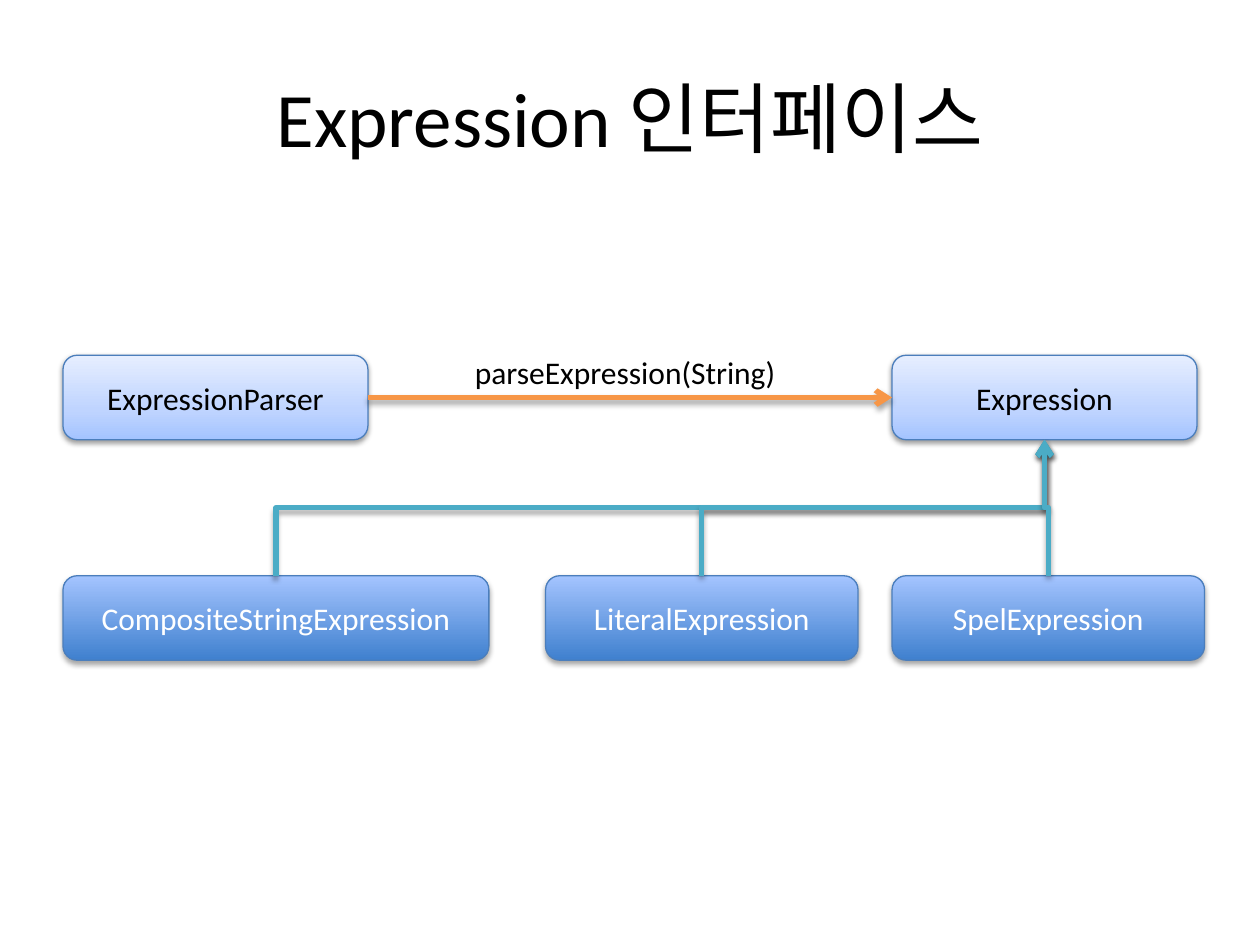
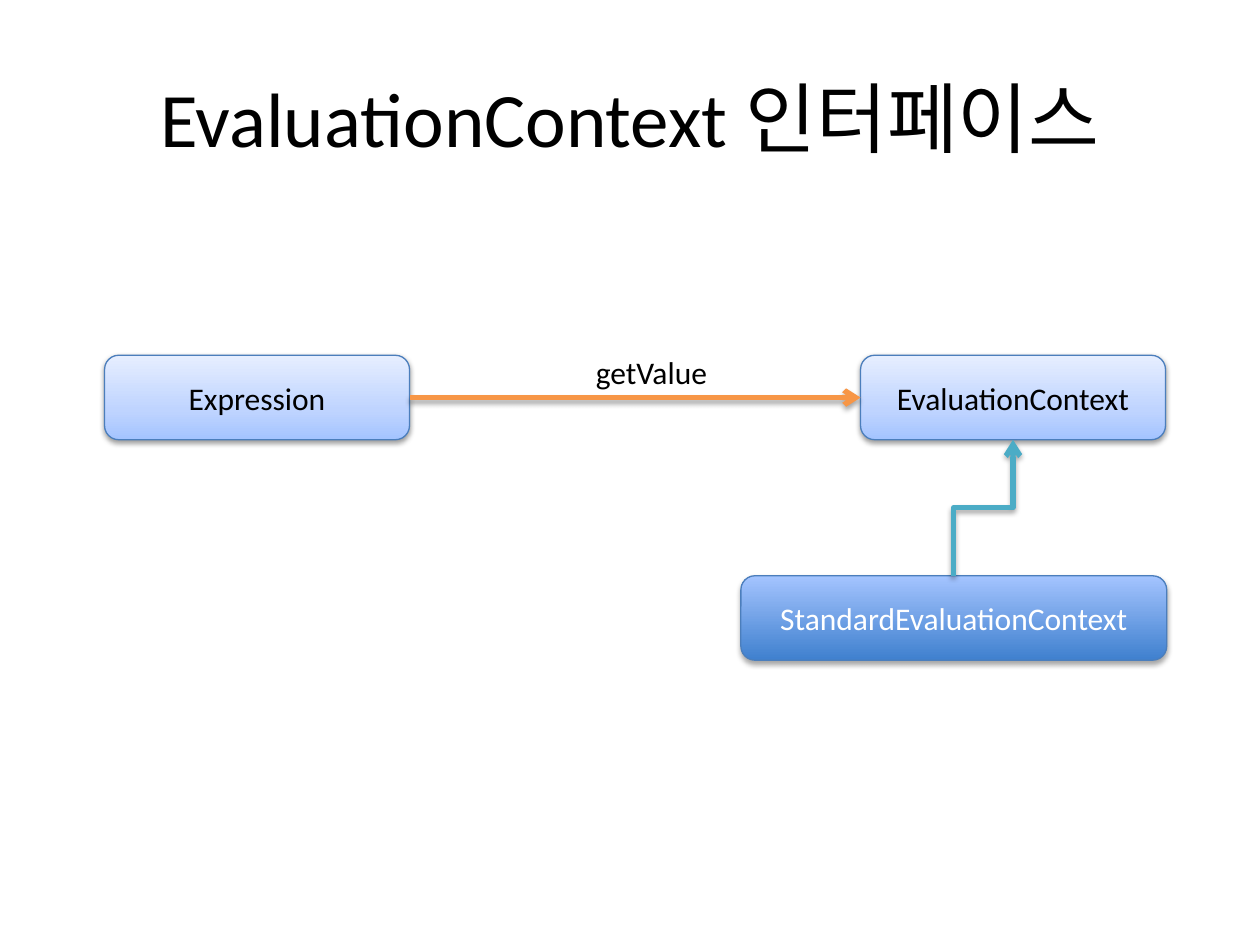
from dataclasses import dataclass

from lxml.etree import SubElement
from pptx import Presentation
from pptx.dml.color import RGBColor
from pptx.enum.shapes import MSO_CONNECTOR as Connector, MSO_SHAPE as Shape
from pptx.enum.text import MSO_ANCHOR as Anchor, MSO_AUTO_SIZE as AutoSize, PP_ALIGN as Align
from pptx.oxml.ns import qn
from pptx.util import Inches, Pt

TOP, LEFT, BOTTOM, RIGHT = range(4)


@dataclass(frozen=True)
class BoxStyle:
    stops: tuple
    text: str
    shadow_alpha: int
    shadow_distance: float


@dataclass(frozen=True)
class Theme:
    font: str = "Calibri"
    title_size: int = 44
    label_size: int = 18
    text: str = "000000"
    outline: str = "4B7EBC"
    call: str = "F79646"
    inherit: str = "4BACC6"
    interface: BoxStyle = BoxStyle(
        ((0, "A4C4FF"), (35, "BFD4FF"), (100, "E6EEFF")), "000000", 38, 1.6)
    implementation: BoxStyle = BoxStyle(
        ((0, "3F80CE"), (100, "A4C4FF")), "FFFFFF", 35, 1.8)


THEME = Theme()
INTERFACE_TOP, IMPLEMENTATION_TOP = 2.82, 4.57
INTERFACE_WIDTH, BOX_HEIGHT = 2.42, 0.67
LABEL_TOP, LABEL_HEIGHT = 2.75, 0.4


def write_text(frame, text, size=THEME.label_size, color=THEME.text,
               align=Align.CENTER, anchor=Anchor.MIDDLE):
    frame.vertical_anchor = anchor
    para = frame.paragraphs[0]
    para.alignment = align
    span = para.add_run()
    span.text = text
    span.font.name = THEME.font
    span.font.size = Pt(size)
    span.font.color.rgb = RGBColor.from_string(color)


def add_color(parent, color, alpha=None):
    node = SubElement(parent, qn("a:srgbClr"), val=color)
    if alpha is not None:
        SubElement(node, qn("a:alpha"), val=str(alpha * 1000))


def add_shadow(shape, alpha=35, distance=1.8):
    effects = SubElement(shape._element.spPr, qn("a:effectLst"))
    shadow = SubElement(effects, qn("a:outerShdw"), blurRad=str(Pt(3.1)),
                        dist=str(Pt(distance)), dir="5400000", rotWithShape="0")
    add_color(shadow, "000000", alpha)


def fill_gradient(shape, stops):
    shape.fill.gradient()
    shape.fill.gradient_angle = 90
    stop_list = shape._element.spPr.find(qn("a:gradFill")).find(qn("a:gsLst"))
    for old_stop in list(stop_list):
        stop_list.remove(old_stop)
    for position, color in stops:
        add_color(SubElement(stop_list, qn("a:gs"), pos=str(position * 1000)), color)


def add_box(page, name, left, top, width, style):
    box = page.shapes.add_shape(Shape.ROUNDED_RECTANGLE, Inches(left), Inches(top),
                                Inches(width), Inches(BOX_HEIGHT))
    fill_gradient(box, style.stops)
    box.line.color.rgb = RGBColor.from_string(THEME.outline)
    box.line.width = Pt(0.75)
    add_shadow(box, style.shadow_alpha, style.shadow_distance)
    write_text(box.text_frame, name, color=style.text)
    return box


def turn_upward(arrow):
    run, rise = arrow.end_x - arrow.begin_x, arrow.begin_y - arrow.end_y
    center_x = (arrow.begin_x + arrow.end_x) // 2
    center_y = (arrow.begin_y + arrow.end_y) // 2
    arrow.width, arrow.height = rise, abs(run)
    arrow.left, arrow.top = center_x - rise // 2, center_y - abs(run) // 2
    frame = arrow._element.spPr.find(qn("a:xfrm"))
    frame.set("rot", "16200000")
    frame.set("flipH", "0")
    frame.set("flipV", "1" if run < 0 else "0")


def add_arrow(page, source, source_side, target, target_side, color):
    arrow = page.shapes.add_connector(Connector.ELBOW, 0, 0, 0, 0)
    arrow.begin_connect(source, source_side)
    arrow.end_connect(target, target_side)
    if source_side == TOP:
        turn_upward(arrow)
    arrow.line.color.rgb = RGBColor.from_string(color)
    arrow.line.width = Pt(3)
    SubElement(arrow._element.spPr.find(qn("a:ln")), qn("a:tailEnd"), type="arrow")
    add_shadow(arrow)


def add_title(page, text):
    title = page.shapes.title
    title.left, title.top = Inches(0.5), Inches(0.3)
    title.width, title.height = Inches(9), Inches(1.25)
    write_text(title.text_frame, text, size=THEME.title_size)


def add_call_label(page, text, left, width):
    label = page.shapes.add_textbox(Inches(left), Inches(LABEL_TOP),
                                    Inches(width), Inches(LABEL_HEIGHT))
    label.text_frame.word_wrap = False
    label.text_frame.auto_size = AutoSize.SHAPE_TO_FIT_TEXT
    write_text(label.text_frame, text, align=Align.LEFT, anchor=Anchor.TOP)


def add_interface_slide(deck, title, caller, target, call, implementations):
    page = deck.slides.add_slide(deck.slide_layouts[5])
    add_title(page, title)
    caller_box, target_box = [
        add_box(page, name, left, INTERFACE_TOP, INTERFACE_WIDTH, THEME.interface)
        for name, left in (caller, target)]
    add_arrow(page, caller_box, RIGHT, target_box, LEFT, THEME.call)
    add_call_label(page, *call)
    implementation_boxes = [
        add_box(page, name, left, IMPLEMENTATION_TOP, width, THEME.implementation)
        for name, left, width in implementations]
    for box in implementation_boxes:
        add_arrow(page, box, TOP, target_box, BOTTOM, THEME.inherit)


def main():
    deck = Presentation()
    deck.slide_width, deck.slide_height = Inches(10), Inches(7.5)
    add_interface_slide(
        deck, "Expression 인터페이스",
        caller=("ExpressionParser", 0.5),
        target=("Expression", 7.08),
        call=("parseExpression(String)", 3.67, 2.61),
        implementations=[("CompositeStringExpression", 0.5, 3.38),
                         ("LiteralExpression", 4.33, 2.48),
                         ("SpelExpression", 7.08, 2.48)])
    add_interface_slide(
        deck, "EvaluationContext 인터페이스",
        caller=("Expression", 0.83),
        target=("EvaluationContext", 6.83),
        call=("getValue", 4.63, 1.09),
        implementations=[("StandardEvaluationContext", 5.88, 3.38)])
    deck.save("out.pptx")


if __name__ == "__main__":
    main()
